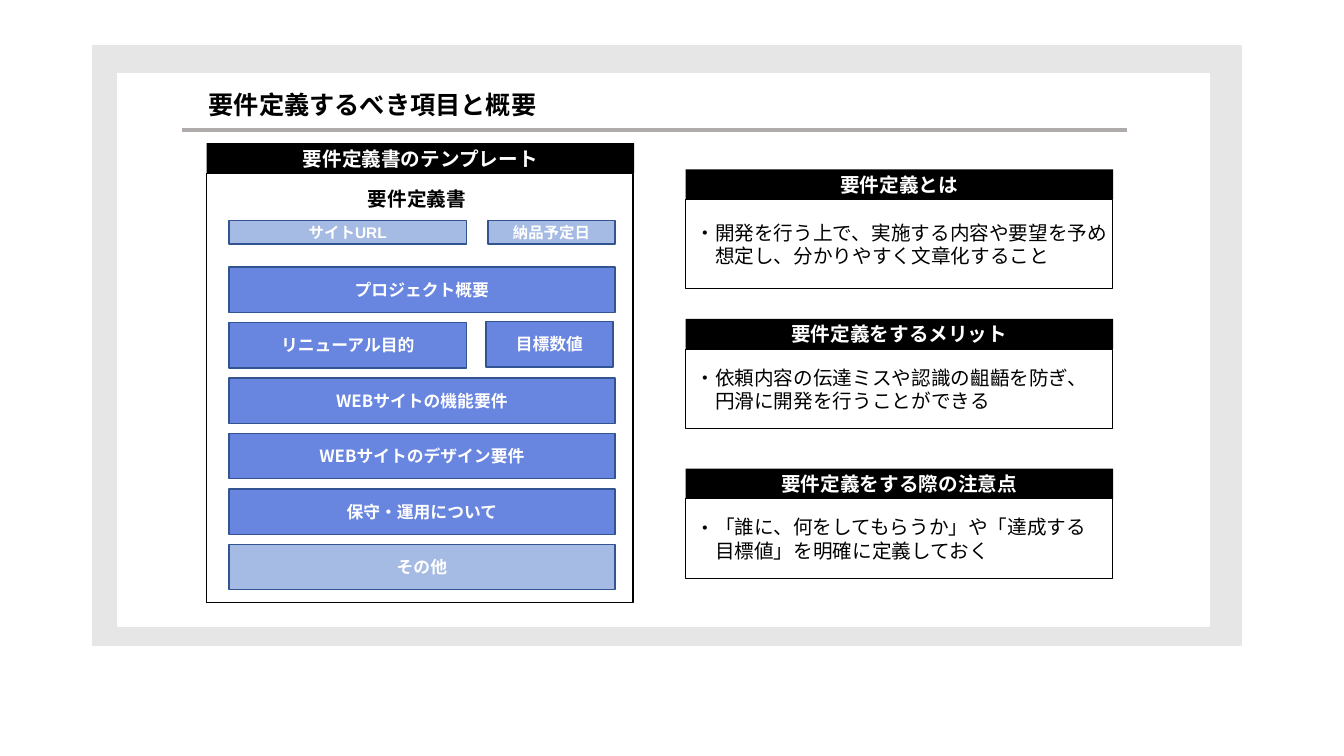
from dataclasses import dataclass

from lxml.etree import SubElement
from pptx import Presentation
from pptx.dml.color import RGBColor
from pptx.enum.shapes import MSO_CONNECTOR, MSO_SHAPE
from pptx.enum.text import MSO_ANCHOR, MSO_AUTO_SIZE, PP_ALIGN
from pptx.oxml.ns import qn
from pptx.shapes.autoshape import Shape
from pptx.slide import Slide
from pptx.text.text import TextFrame
from pptx.util import Inches, Pt


@dataclass(frozen=True)
class Theme:
    font: str = "Noto Sans CJK JP"
    label_font: str = "Arial"
    black: str = "000000"
    white: str = "FFFFFF"
    frame: str = "E6E6E6"
    rule: str = "AFABAB"
    main: str = "6885DF"
    light: str = "A5BBE3"
    edge: str = "325491"
    title_size: float = 18
    heading_size: float = 14
    item_size: float = 12
    label_size: float = 11
    body_leading: float = 17


@dataclass(frozen=True)
class Box:
    left: float
    top: float
    width: float
    height: float


@dataclass(frozen=True)
class TextStyle:
    size: float
    color: str
    bold: bool = True
    align: PP_ALIGN = PP_ALIGN.CENTER
    font: str = "Noto Sans CJK JP"


@dataclass(frozen=True)
class Item:
    text: str
    box: Box
    fill: str
    style: TextStyle


@dataclass(frozen=True)
class Explanation:
    heading: str
    body: str
    body_height: float


THEME = Theme()
TITLE = TextStyle(THEME.title_size, THEME.black, align=PP_ALIGN.LEFT)
HEADING = TextStyle(THEME.heading_size, THEME.white)
SUBHEADING = TextStyle(THEME.heading_size, THEME.black, align=PP_ALIGN.LEFT)
BODY = TextStyle(THEME.heading_size, THEME.black, False, PP_ALIGN.LEFT)
ITEM = TextStyle(THEME.item_size, THEME.white)
LABEL = TextStyle(THEME.label_size, THEME.white, font=THEME.label_font)

PANEL_WIDTH, BAR_WIDTH, BAR_HEIGHT = 4.23, 4.24, 0.3
ITEM_LEFT, FULL, WIDE, NARROW = 2.27, 3.83, 2.36, 1.26
ROW_TOP, ROW_PITCH, ROW_HEIGHT = 2.65, 0.55, 0.45
LABEL_TOP, LABEL_HEIGHT = 2.19, 0.23
EXPLANATION_LEFT, EXPLANATION_TOP, EXPLANATION_PITCH = 6.8, 1.68, 1.485

ROWS = ["プロジェクト概要", "リニューアル目的", "WEBサイトの機能要件",
        "WEBサイトのデザイン要件", "保守・運用について", "その他"]
SPLIT_ROW = "リニューアル目的"
LIGHT_ROW = "その他"

EXPLANATIONS = [
    Explanation("要件定義とは",
                "開発を行う上で、実施する内容や要望を予め\v想定し、分かりやすく文章化すること", 0.88),
    Explanation("要件定義をするメリット",
                "依頼内容の伝達ミスや認識の齟齬を防ぎ、\v円滑に開発を行うことができる", 0.79),
    Explanation("要件定義をする際の注意点",
                "「誰に、何をしてもらうか」や「達成する\v目標値」を明確に定義しておく", 0.79),
]


def place(shape: Shape, box: Box) -> None:
    shape.left, shape.top = Inches(box.left), Inches(box.top)
    shape.width, shape.height = Inches(box.width), Inches(box.height)


def write(frame: TextFrame, text: str, style: TextStyle, bullet: bool = False) -> None:
    frame.word_wrap = True
    frame.auto_size = MSO_AUTO_SIZE.NONE
    frame.vertical_anchor = MSO_ANCHOR.MIDDLE
    frame.margin_left = Inches(0.1)
    frame.margin_right = frame.margin_top = frame.margin_bottom = 0
    if style.align == PP_ALIGN.CENTER:
        frame.margin_right = frame.margin_left
    frame.text = text
    paragraph = frame.paragraphs[0]
    paragraph.alignment = style.align
    if bullet:
        paragraph.line_spacing = Pt(THEME.body_leading)
        properties = paragraph._p.get_or_add_pPr()
        properties.set("marL", str(Pt(style.size)))
        properties.set("indent", str(-Pt(style.size)))
        SubElement(properties, qn("a:buFont")).set("typeface", style.font)
        SubElement(properties, qn("a:buChar")).set("char", "・")
    font = paragraph.font
    font.size, font.bold, font.name = Pt(style.size), style.bold, style.font
    font.color.rgb = RGBColor.from_string(style.color)
    # East Asian characters take their own typeface
    defaults = paragraph._p.pPr.find(qn("a:defRPr"))
    SubElement(defaults, qn("a:ea")).set("typeface", THEME.font)


def add_box(slide: Slide, box: Box, fill: str, line: str | None = None,
            line_width: float = 1) -> Shape:
    shape = slide.shapes.add_shape(MSO_SHAPE.RECTANGLE, 0, 0, 0, 0)
    place(shape, box)
    shape.shadow.inherit = False
    shape.fill.solid()
    shape.fill.fore_color.rgb = RGBColor.from_string(fill)
    if line:
        shape.line.color.rgb = RGBColor.from_string(line)
        shape.line.width = Pt(line_width)
    else:
        shape.line.fill.background()
    return shape


def add_heading_bar(slide: Slide, text: str, left: float, top: float) -> None:
    bar = add_box(slide, Box(left, top, BAR_WIDTH, BAR_HEIGHT), THEME.black)
    write(bar.text_frame, text, HEADING)


def add_title(slide: Slide) -> None:
    title = slide.shapes.title
    place(title, Box(1.97, 0.84, 5.69, 0.4))
    write(title.text_frame, "要件定義するべき項目と概要", TITLE)
    # Bring the title in front of the frame
    title.element.getparent().append(title.element)
    rule = slide.shapes.add_connector(MSO_CONNECTOR.STRAIGHT, Inches(1.81), Inches(1.29),
                                      Inches(11.18), Inches(1.29))
    rule.line.color.rgb = RGBColor.from_string(THEME.rule)
    rule.line.width = Pt(3)
    SubElement(rule._element.spPr, qn("a:effectLst"))


def template_items() -> list[Item]:
    items = [
        Item("サイトURL", Box(ITEM_LEFT, LABEL_TOP, WIDE, LABEL_HEIGHT), THEME.light, LABEL),
        Item("納品予定日", Box(4.84, LABEL_TOP, NARROW, LABEL_HEIGHT), THEME.light, LABEL),
        Item("目標数値", Box(4.82, 3.19, NARROW, ROW_HEIGHT), THEME.main, ITEM),
    ]
    for index, text in enumerate(ROWS):
        width = WIDE if text == SPLIT_ROW else FULL
        fill = THEME.light if text == LIGHT_ROW else THEME.main
        box = Box(ITEM_LEFT, ROW_TOP + index * ROW_PITCH, width, ROW_HEIGHT)
        items.append(Item(text, box, fill, ITEM))
    return items


def add_template(slide: Slide) -> None:
    add_box(slide, Box(2.05, 1.72, PANEL_WIDTH, 4.26), THEME.white, THEME.black)
    subheading = slide.shapes.add_textbox(0, 0, 0, 0)
    place(subheading, Box(3.55, 1.8, 1.27, 0.34))
    write(subheading.text_frame, "要件定義書", SUBHEADING)
    for item in template_items():
        shape = add_box(slide, item.box, item.fill, THEME.edge)
        write(shape.text_frame, item.text, item.style)
    add_heading_bar(slide, "要件定義書のテンプレート", 2.05, 1.42)


def add_explanations(slide: Slide) -> None:
    for index, explanation in enumerate(EXPLANATIONS):
        top = EXPLANATION_TOP + index * EXPLANATION_PITCH
        add_heading_bar(slide, explanation.heading, EXPLANATION_LEFT, top)
        box = Box(EXPLANATION_LEFT, top + BAR_HEIGHT, PANEL_WIDTH, explanation.body_height)
        body = add_box(slide, box, THEME.white, THEME.black, 0.75)
        write(body.text_frame, explanation.body, BODY, bullet=True)


def main() -> None:
    presentation = Presentation()
    presentation.slide_width, presentation.slide_height = Inches(13.33), Inches(7.5)
    slide = presentation.slides.add_slide(presentation.slide_layouts[5])
    # Frame
    add_box(slide, Box(0.92, 0.45, 11.39, 5.95), THEME.frame, THEME.frame)
    add_box(slide, Box(1.17, 0.73, 10.82, 5.48), THEME.white, THEME.white)
    # Content
    add_title(slide)
    add_template(slide)
    add_explanations(slide)
    presentation.save("out.pptx")


if __name__ == "__main__":
    main()
